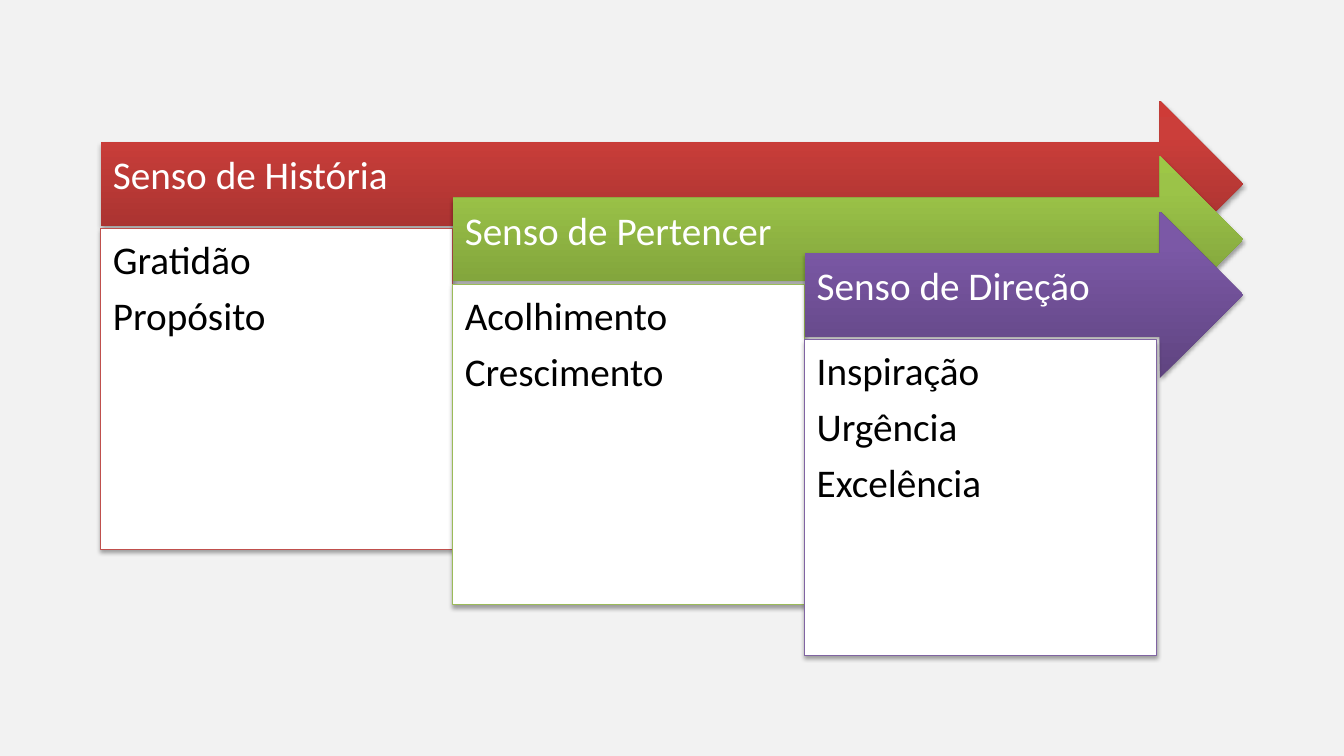
import copy

import pptx
import pptx.dml.color
import pptx.enum.shapes
import pptx.enum.text
import pptx.oxml
import pptx.oxml.ns
import pptx.util

RGBColor = pptx.dml.color.RGBColor
Inches = pptx.util.Inches
Pt = pptx.util.Pt
Shape = pptx.enum.shapes.MSO_SHAPE
Anchor = pptx.enum.text.MSO_ANCHOR
qn = pptx.oxml.ns.qn

BACKGROUND = RGBColor(0xF2, 0xF2, 0xF2)
WHITE = RGBColor(0xFF, 0xFF, 0xFF)
BLACK = RGBColor(0x00, 0x00, 0x00)
RED = RGBColor(0xC0, 0x50, 0x4D)
GREEN = RGBColor(0x9B, 0xBB, 0x59)
PURPLE = RGBColor(0x80, 0x64, 0xA2)
RED_SHADES = (RGBColor(0x9C, 0x2F, 0x2D), RGBColor(0xCB, 0x3E, 0x3A), RGBColor(0xCE, 0x3B, 0x37))
GREEN_SHADES = (RGBColor(0x77, 0x97, 0x37), RGBColor(0x9B, 0xC3, 0x48), RGBColor(0x9D, 0xC7, 0x46))
PURPLE_SHADES = (RGBColor(0x5F, 0x44, 0x80), RGBColor(0x7B, 0x58, 0xA6), RGBColor(0x7C, 0x57, 0xA8))

SHADOW = (
    f'<a:outerShdw {pptx.oxml.ns.nsdecls("a")} blurRad="{Pt(3.1)}" dist="{Pt(1.8)}" '
    'dir="5400000" rotWithShape="0"><a:srgbClr val="000000">'
    '<a:alpha val="35000"/></a:srgbClr></a:outerShdw>'
)

LEFT, TOP = 1, 1
ARROW_TIP = 12.33
ARROW_HEIGHT = 1.65
COLUMN_WIDTH = 3.49
STEP_DOWN = 0.55
PANEL_OFFSET = 1.27
INSET = 0.12

# heading, items, arrow shades, panel border, panel height
SENSES = [
    ("Senso de História", ["Gratidão", "Propósito"], RED_SHADES, RED, 3.18),
    ("Senso de Pertencer", ["Acolhimento", "Crescimento"], GREEN_SHADES, GREEN, 3.18),
    ("Senso de Direção", ["Inspiração", "Urgência", "Excelência"], PURPLE_SHADES, PURPLE, 3.13),
]


class SlideBuilder:
    font = "Calibri"
    size = Pt(28)
    stops = (0, 0.8, 1)

    def __init__(self, slide):
        self.slide = slide
        slide.background.fill.solid()
        slide.background.fill.fore_color.rgb = BACKGROUND

    def shadowed_shape(self, kind, left, top, width, height):
        shape = self.slide.shapes.add_shape(
            kind, Inches(left), Inches(top), Inches(width), Inches(height))
        shape.shadow.inherit = False
        effects = shape._element.spPr.find(qn("a:effectLst"))
        effects.append(pptx.oxml.parse_xml(SHADOW))
        return shape

    def add_lines(self, shape, lines, color, anchor, right=INSET, bottom=INSET):
        frame = shape.text_frame
        frame.word_wrap = True
        frame.vertical_anchor = anchor
        frame.margin_left = frame.margin_top = Inches(INSET)
        frame.margin_right, frame.margin_bottom = Inches(right), Inches(bottom)
        for index, line in enumerate(lines):
            paragraph = frame.add_paragraph() if index else frame.paragraphs[0]
            paragraph.alignment = pptx.enum.text.PP_ALIGN.LEFT
            paragraph.line_spacing = 0.9
            paragraph.space_after = Pt(9.8)
            run = paragraph.add_run()
            run.text = line
            run.font.name = self.font
            run.font.size = self.size
            run.font.color.rgb = color

    def arrow(self, left, top, width, heading, shades):
        arrow = self.shadowed_shape(Shape.RIGHT_ARROW, left, top, width, ARROW_HEIGHT)
        arrow.line.fill.background()
        arrow.fill.gradient()
        arrow.fill.gradient_angle = 90
        stop_list = arrow._element.spPr.find(qn("a:gradFill")).find(qn("a:gsLst"))
        stop_list.append(copy.deepcopy(stop_list[-1]))
        for stop, position, shade in zip(arrow.fill.gradient_stops, self.stops, shades):
            stop.position = position
            stop.color.rgb = shade
        self.add_lines(arrow, [heading], WHITE, Anchor.MIDDLE, right=0.28, bottom=0.26)

    def panel(self, left, top, height, items, border):
        panel = self.shadowed_shape(Shape.RECTANGLE, left, top, COLUMN_WIDTH, height)
        panel.fill.solid()
        panel.fill.fore_color.rgb = WHITE
        panel.line.color.rgb = border
        panel.line.width = Pt(0.75)
        self.add_lines(panel, items, BLACK, Anchor.TOP)


def main():
    deck = pptx.Presentation()
    deck.slide_width, deck.slide_height = Inches(13.33), Inches(7.5)
    builder = SlideBuilder(deck.slides.add_slide(deck.slide_layouts[6]))
    for index, (heading, items, shades, border, height) in enumerate(SENSES):
        left = LEFT + index * COLUMN_WIDTH
        top = TOP + index * STEP_DOWN
        builder.arrow(left, top, ARROW_TIP - left, heading, shades)
        builder.panel(left, top + PANEL_OFFSET, height, items, border)
    deck.save("out.pptx")


if __name__ == "__main__":
    main()
